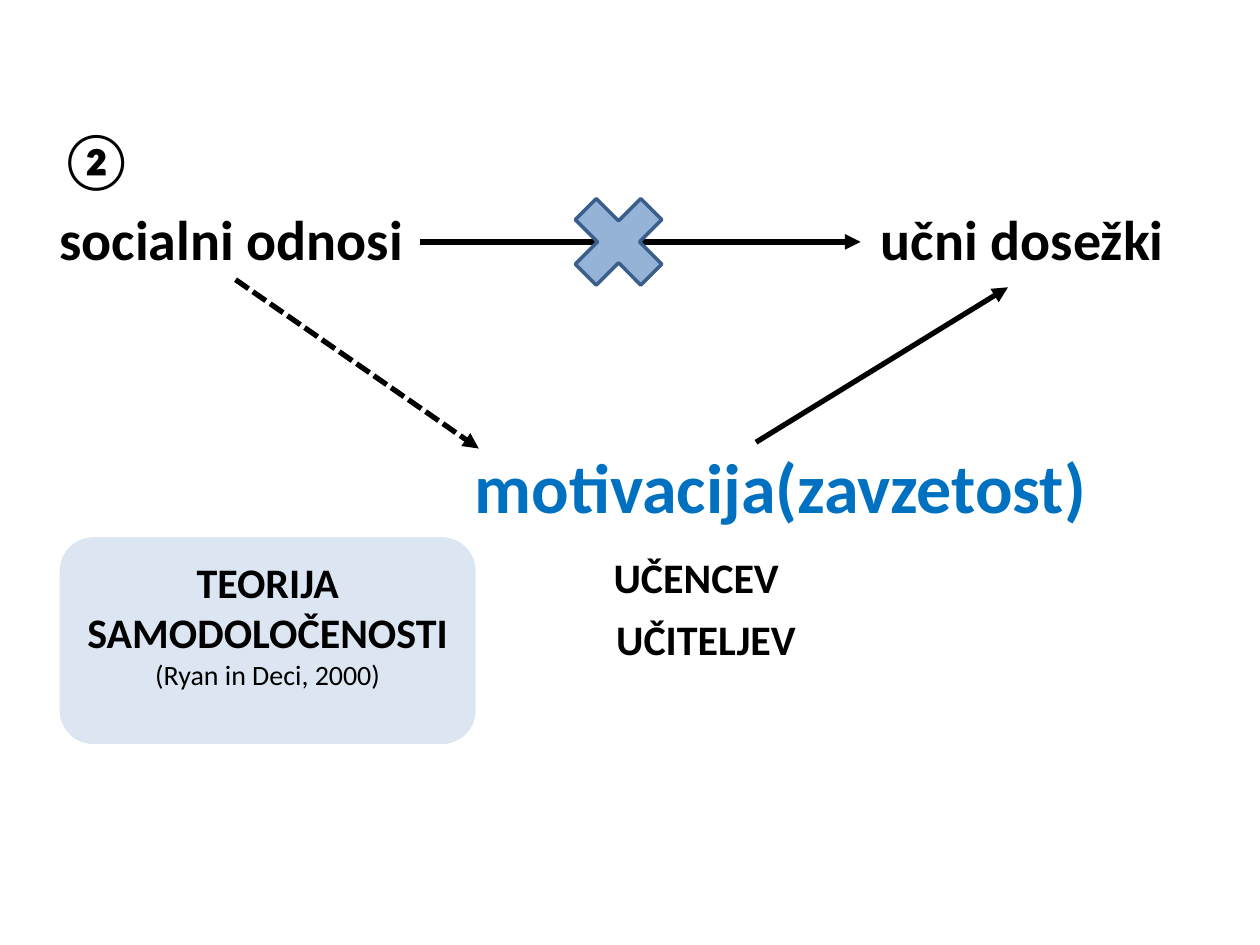
"""Build a slide on how social relations lead to achievement through motivation."""
from pptx import Presentation
from pptx.dml.color import RGBColor
from pptx.enum.dml import MSO_LINE
from pptx.enum.shapes import MSO_CONNECTOR, MSO_SHAPE
from pptx.enum.text import MSO_ANCHOR, PP_ALIGN
from pptx.oxml.ns import qn
from pptx.util import Inches, Pt
from lxml import etree

STRAIGHT = MSO_CONNECTOR.STRAIGHT
DASHED = MSO_LINE.SQUARE_DOT
CROSS = MSO_SHAPE.MATH_MULTIPLY
ROUNDED = MSO_SHAPE.ROUNDED_RECTANGLE
CENTER = PP_ALIGN.CENTER
MIDDLE = MSO_ANCHOR.MIDDLE

FONT = "Calibri"
COLORS = {
    "text": "000000",
    "motivation": "0070C0",
    "cross": "95B3D7",
    "cross_edge": "3A5F8C",
    "theory": "DCE6F2",
    "theory_edge": "FFFFFF",
}


def rgb(name):
    return RGBColor.from_string(COLORS[name])


def write(paragraph, text, size, color="text", bold=True):
    paragraph.text = text
    font = paragraph.font
    font.name, font.size, font.bold = FONT, Pt(size), bold
    font.color.rgb = rgb(color)


def add_label(slide, text, left, top, width, size, color="text"):
    box = slide.shapes.add_textbox(
        Inches(left), Inches(top), Inches(width), Inches(size / 60))
    frame = box.text_frame
    frame.word_wrap = True
    frame.margin_left = frame.margin_right = 0
    frame.margin_top = frame.margin_bottom = 0
    write(frame.paragraphs[0], text, size, color)


def add_arrow(slide, start, end, dash=None):
    points = [Inches(value) for value in (*start, *end)]
    arrow = slide.shapes.add_connector(STRAIGHT, *points)
    arrow.line.color.rgb = rgb("text")
    arrow.line.width = Pt(3)
    if dash is not None:
        arrow.line.dash_style = dash
    outline = arrow.line._get_or_add_ln()
    etree.SubElement(outline, qn("a:tailEnd"), type="triangle")
    etree.SubElement(arrow._element.spPr, qn("a:effectLst"))


def add_block(slide, kind, left, top, width, height, fill, edge):
    block = slide.shapes.add_shape(
        kind, Inches(left), Inches(top), Inches(width), Inches(height))
    block.shadow.inherit = False
    block.fill.solid()
    block.fill.fore_color.rgb = rgb(fill)
    block.line.color.rgb = rgb(edge)
    block.line.width = Pt(2)
    return block


def add_theory(slide):
    theory = add_block(
        slide, ROUNDED, 0.46, 4.25, 3.33, 1.67, "theory", "theory_edge")
    frame = theory.text_frame
    frame.word_wrap = True
    frame.vertical_anchor = MIDDLE
    frame.margin_bottom = Inches(0.32)
    name, authors = frame.paragraphs[0], frame.add_paragraph()
    write(name, "TEORIJA SAMODOLOČENOSTI", 24)
    write(authors, "(Ryan in Deci, 2000)", 16, bold=False)
    name.alignment = authors.alignment = CENTER


def main():
    deck = Presentation()
    deck.slide_width, deck.slide_height = Inches(10), Inches(7.5)
    slide = deck.slides.add_slide(deck.slide_layouts[6])

    add_label(slide, "②", 0.47, 0.99, 0.8, 32)
    add_label(slide, "socialni odnosi", 0.47, 1.62, 2.85, 32)
    add_label(slide, "učni dosežki", 6.99, 1.62, 2.55, 32)
    add_label(slide, "motivacija(zavzetost)", 3.77, 3.52, 5.2, 40, "motivation")
    add_label(slide, "UČENCEV", 4.87, 4.38, 2, 24)
    add_label(slide, "UČITELJEV", 4.89, 4.87, 2, 24)

    add_arrow(slide, (3.33, 1.92), (6.83, 1.92))
    add_block(slide, CROSS, 4.41, 1.42, 1, 1, "cross", "cross_edge")
    add_arrow(slide, (1.87, 2.22), (3.8, 3.56), DASHED)
    add_arrow(slide, (6, 3.51), (8, 2.28))
    add_theory(slide)

    deck.save("out.pptx")


if __name__ == "__main__":
    main()
